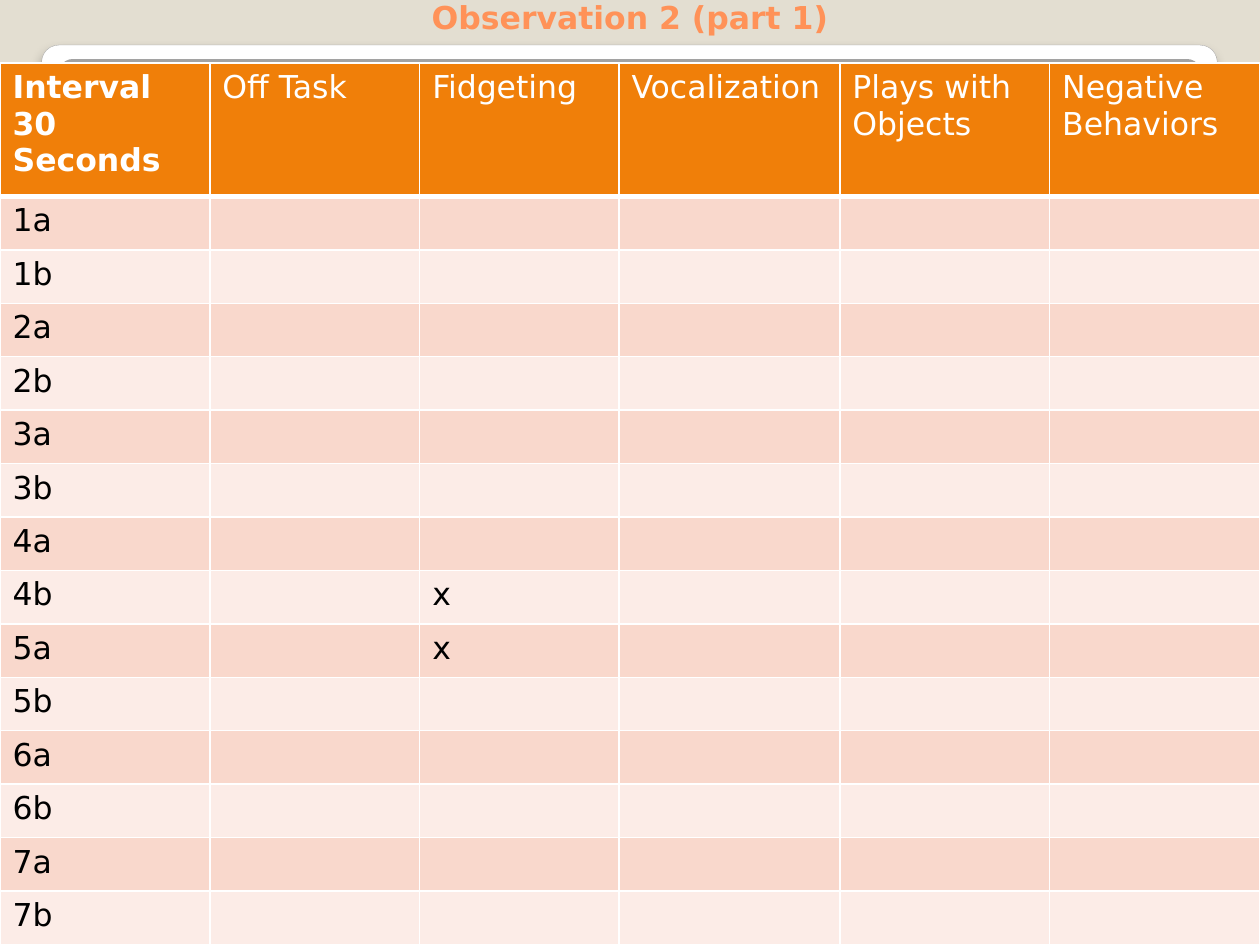
import pptx
import pptx.util
import pptx.oxml
import pptx.dml.color
import pptx.enum.shapes
import pptx.enum.text

Cm, Pt = pptx.util.Cm, pptx.util.Pt
RGB = pptx.dml.color.RGBColor
NS = 'xmlns:a="http://schemas.openxmlformats.org/drawingml/2006/main"'

BACK = RGB(0xE3, 0xDE, 0xD1)
EDGE = RGB(0xA4, 0xA4, 0xA4)
CORAL = RGB(0xFF, 0x92, 0x58)
ORANGE = RGB(0xF0, 0x7F, 0x09)
PINK = RGB(0xF9, 0xD8, 0xCC)
PALE = RGB(0xFC, 0xEC, 0xE7)
WHITE = RGB(0xFF, 0xFF, 0xFF)
BLACK = RGB(0, 0, 0)

TITLE = "Observation 2 (part 1)"
HEADS = ["Interval 30 Seconds", "Off Task", "Fidgeting", "Vocalization",
         "Plays with Objects", "Negative Behaviors"]
TIMES = [f"{num}{half}" for num in range(1, 8) for half in "ab"]
MARKS = {("4b", "Fidgeting"): "x", ("5a", "Fidgeting"): "x"}

WIDE, HIGH = 25.4, 19.05
TOP, HEAD = 1.27, 2.69
COLS = [4.23, 4.23, 4.02, 4.45, 4.23, 4.24]
ROW = (HIGH - TOP - HEAD) / len(TIMES)

PANELS = [
    {"at": (0.84, 0.91, 23.7, 17.22),
     "stops": [(0, "FFFFFF"), (98, "FFFFFF"), (99, "F7F7F7"), (100, "DADADA")],
     "way": '<a:lin ang="5400000" scaled="0"/>', "framed": True},
    {"at": (1.17, 1.19, 23.06, 15.24),
     "stops": [(0, "FFFFFF"), (55, "E1E1E1"), (100, "A2A2A2")],
     "way": '<a:path path="circle"><a:fillToRect l="50000" t="175000" '
            'r="50000" b="-75000"/></a:path>', "framed": False},
]
SHADE = (f'<a:outerShdw {NS} blurRad="{Pt(6)}" dist="{Pt(4)}" dir="5400000" '
         'algn="t" rotWithShape="0"><a:srgbClr val="000000">'
         '<a:alpha val="25000"/></a:srgbClr></a:outerShdw>')


def style(run, **looks):
    run.font.color.rgb = looks.pop("ink")
    for key, val in {"name": "DejaVu Sans", "size": Pt(18), **looks}.items():
        setattr(run.font, key, val)


def add_panel(slide, at, stops, way, framed):
    kind = pptx.enum.shapes.MSO_SHAPE.ROUNDED_RECTANGLE
    panel = slide.shapes.add_shape(kind, *map(Cm, at))
    panel.adjustments[0] = 0.02
    panel.shadow.inherit = False
    props = panel.element.spPr
    marks = "".join(f'<a:gs pos="{pos * 1000}"><a:srgbClr val="{hue}"/></a:gs>'
                    for pos, hue in stops)
    props.insert(2, pptx.oxml.parse_xml(
        f'<a:gradFill {NS} rotWithShape="1"><a:gsLst>{marks}</a:gsLst>{way}</a:gradFill>'))
    if framed:
        panel.line.color.rgb = EDGE
        panel.line.width = Pt(0.16)
        props.find(pptx.oxml.ns.qn("a:effectLst")).append(pptx.oxml.parse_xml(SHADE))
    else:
        panel.line.fill.background()


def add_title(slide):
    box = slide.shapes.add_textbox(Cm(1.27), Cm(-0.43), Cm(22.86), Cm(1.27))
    frame = box.text_frame
    frame.word_wrap = True
    frame.vertical_anchor = pptx.enum.text.MSO_ANCHOR.BOTTOM
    para = frame.paragraphs[0]
    para.alignment = pptx.enum.text.PP_ALIGN.CENTER
    run = para.add_run()
    run.text = TITLE
    style(run, ink=CORAL, bold=True)


def fill_cell(cell, text, fill, ink, bold, thick):
    """Set text, fill and white borders; thick names the 3 pt side."""
    props = cell._tc.get_or_add_tcPr()
    for side in "LRTB":
        size = Pt(3 if side == thick else 1)
        props.append(pptx.oxml.parse_xml(
            f'<a:ln{side} {NS} w="{size}"><a:solidFill><a:srgbClr val="{WHITE}"/>'
            f'</a:solidFill></a:ln{side}>'))
    cell.fill.solid()
    cell.fill.fore_color.rgb = fill
    if text:
        run = cell.text_frame.paragraphs[0].add_run()
        run.text = text
        style(run, ink=ink, bold=bold)


def add_grid(slide):
    rows = [HEADS] + [[time] + [MARKS.get((time, head), "") for head in HEADS[1:]]
                      for time in TIMES]
    grid = slide.shapes.add_table(len(rows), len(COLS), 0, Cm(TOP),
                                  Cm(WIDE), Cm(HIGH - TOP)).table
    for col, size in zip(grid.columns, COLS):
        col.width = Cm(size)
    for r, row in enumerate(rows):
        grid.rows[r].height = Cm(ROW if r else HEAD)
        fill = (PINK if r % 2 else PALE) if r else ORANGE
        thick = {0: "B", 1: "T"}.get(r)
        for c, text in enumerate(row):
            fill_cell(grid.cell(r, c), text, fill, BLACK if r else WHITE,
                      r == c == 0, thick)


def main():
    deck = pptx.Presentation()
    deck.slide_width, deck.slide_height = Cm(WIDE), Cm(HIGH)
    slide = deck.slides.add_slide(deck.slide_layouts[6])
    slide.background.fill.solid()
    slide.background.fill.fore_color.rgb = BACK
    for panel in PANELS:
        add_panel(slide, **panel)
    add_title(slide)
    add_grid(slide)
    deck.save("out.pptx")


if __name__ == "__main__":
    main()
